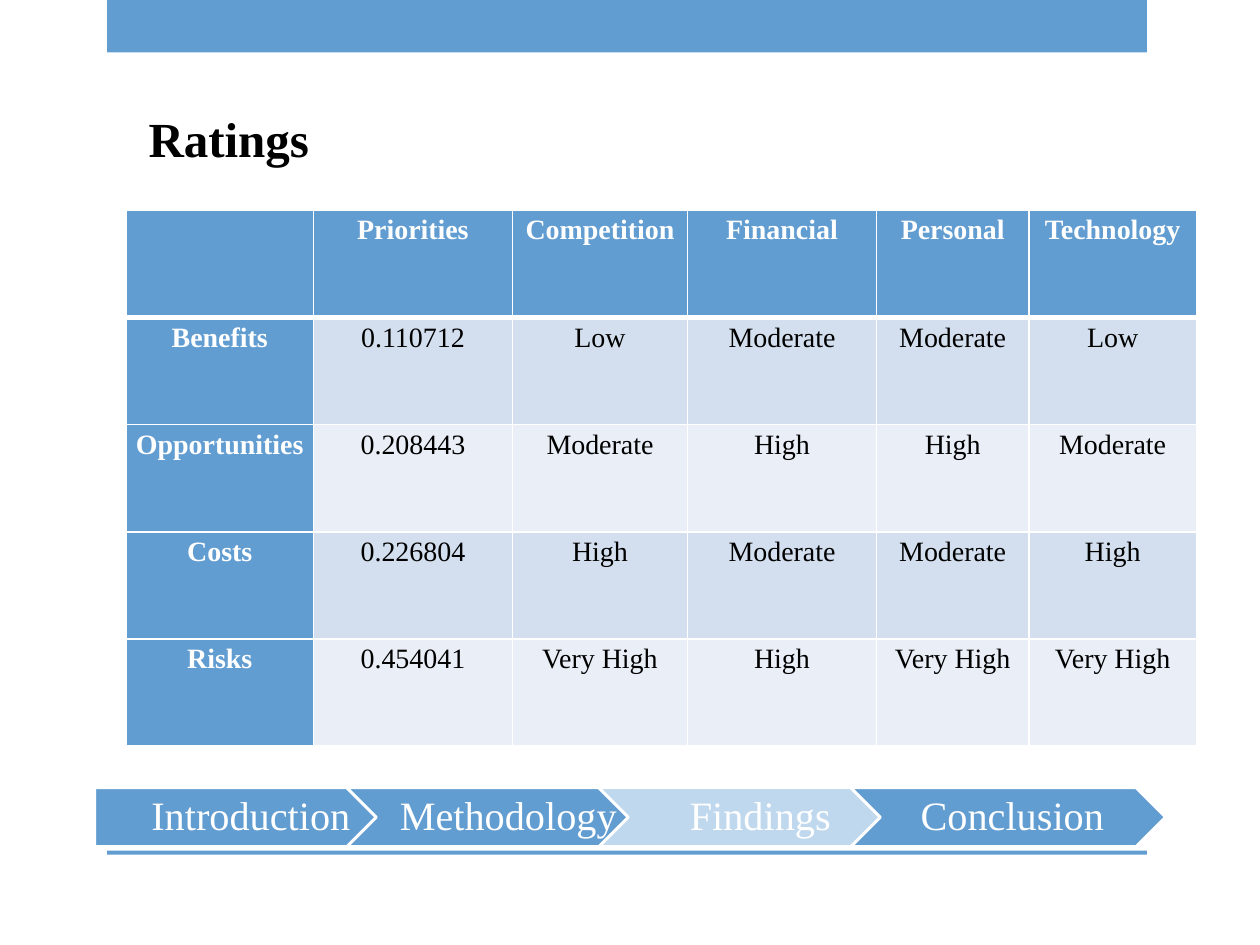
from typing import NamedTuple

from lxml import etree
from pptx import Presentation
from pptx.dml.color import RGBColor
from pptx.enum import shapes, text
from pptx.oxml import ns
from pptx.util import Cm, Pt

FONT = "Times New Roman"
COLORS = {
    "blue": "629DD1",
    "pale_blue": "C0D8ED",
    "dark_band": "D3DFEE",
    "light_band": "EAEFF7",
    "white": "FFFFFF",
    "black": "000000",
}


class Box(NamedTuple):
    left: float
    top: float
    width: float
    height: float

    def lengths(self) -> list:
        return [Cm(side) for side in self]


class Step(NamedTuple):
    label: str
    outline: shapes.MSO_SHAPE = shapes.MSO_SHAPE.CHEVRON
    color: str = "blue"
    left_margin: float = 0.25


BARS = [Box(2.16, 0, 20.96, 1.06), Box(2.16, 17.15, 20.96, 0.08)]
TITLE_BOX = Box(2.74, 2.06, 19.25, 1.45)

COLUMN_WIDTHS = [3.78, 4.01, 3.53, 3.81, 3.07, 3.38]
ROW_HEIGHT = 2.16
RATINGS = [
    ["", "Priorities", "Competition", "Financial", "Personal", "Technology"],
    ["Benefits", "0.110712", "Low", "Moderate", "Moderate", "Low"],
    ["Opportunities", "0.208443", "Moderate", "High", "High", "Moderate"],
    ["Costs", "0.226804", "High", "Moderate", "Moderate", "High"],
    ["Risks", "0.454041", "Very High", "High", "Very High", "Very High"],
]

FIRST_STEP = Box(1.91, 15.88, 6.35, 1.19)
STEP_PITCH = 5.08
STEPS = [
    Step("Introduction", shapes.MSO_SHAPE.PENTAGON, left_margin=0.33),
    Step("Methodology"),
    Step("Findings", color="pale_blue"),
    Step("Conclusion"),
]


def rgb(color: str) -> RGBColor:
    return RGBColor.from_string(COLORS[color])


def add_run(paragraph, words: str, size: float, color: str, bold: bool = False) -> None:
    run = paragraph.add_run()
    run.text = words
    run.font.name = FONT
    run.font.size = Pt(size)
    run.font.bold = bold
    run.font.color.rgb = rgb(color)


def add_filled_shape(slide, outline: shapes.MSO_SHAPE, box: Box, color: str):
    shape = slide.shapes.add_shape(outline, *box.lengths())
    shape.shadow.inherit = False
    shape.fill.solid()
    shape.fill.fore_color.rgb = rgb(color)
    shape.line.fill.background()
    return shape


def add_title(slide) -> None:
    title = slide.shapes.title
    title.left, title.top, title.width, title.height = TITLE_BOX.lengths()
    frame = title.text_frame
    frame.auto_size = text.MSO_AUTO_SIZE.SHAPE_TO_FIT_TEXT
    frame.vertical_anchor = text.MSO_ANCHOR.TOP
    frame.paragraphs[0].alignment = text.PP_ALIGN.LEFT
    add_run(frame.paragraphs[0], "Ratings", 28, "black", bold=True)


def set_borders(cell, **widths: float) -> None:
    """Draw white borders; the keys are the sides L, R, T and B, in that order."""
    properties = cell._tc.get_or_add_tcPr()
    for side, width in widths.items():
        border = etree.SubElement(properties, ns.qn(f"a:ln{side}"), w=str(Pt(width)))
        fill = etree.SubElement(border, ns.qn("a:solidFill"))
        etree.SubElement(fill, ns.qn("a:srgbClr"), val=COLORS["white"])


def format_cell(cell, words: str, row: int, column: int) -> None:
    is_heading = row == 0 or column == 0
    band = "dark_band" if row % 2 else "light_band"
    set_borders(cell, L=1, R=1, T=3 if row == 1 else 1, B=3 if row == 0 else 1)
    cell.fill.solid()
    cell.fill.fore_color.rgb = rgb("blue" if is_heading else band)
    cell.margin_left = cell.margin_right = Cm(0.18)
    cell.margin_top = cell.margin_bottom = 0
    paragraph = cell.text_frame.paragraphs[0]
    paragraph.alignment = text.PP_ALIGN.CENTER
    paragraph.line_spacing = 1.15
    paragraph.space_after = Pt(6)
    if words:
        add_run(paragraph, words, 16, "white" if is_heading else "black", is_heading)


def add_ratings(slide) -> None:
    box = Box(2.54, 4.24, sum(COLUMN_WIDTHS), ROW_HEIGHT * len(RATINGS))
    table = slide.shapes.add_table(
        len(RATINGS), len(COLUMN_WIDTHS), *box.lengths()
    ).table
    for column, width in zip(table.columns, COLUMN_WIDTHS):
        column.width = Cm(width)
    for row, ratings in enumerate(RATINGS):
        table.rows[row].height = Cm(ROW_HEIGHT)
        for column, words in enumerate(ratings):
            format_cell(table.cell(row, column), words, row, column)


def add_step(slide, step: Step, position: int) -> None:
    box = FIRST_STEP._replace(left=FIRST_STEP.left + position * STEP_PITCH)
    arrow = add_filled_shape(slide, step.outline, box, step.color)
    arrow.line.color.rgb = rgb("white")
    arrow.line.width = Pt(1.75)
    frame = arrow.text_frame
    frame.word_wrap = True
    frame.vertical_anchor = text.MSO_ANCHOR.MIDDLE
    frame.margin_left, frame.margin_right = Cm(step.left_margin), Cm(0.08)
    frame.margin_top = frame.margin_bottom = Cm(0.18)
    paragraph = frame.paragraphs[0]
    paragraph.alignment = text.PP_ALIGN.CENTER
    paragraph.line_spacing = 0.9
    add_run(paragraph, step.label, 23, "white")


def main() -> None:
    deck = Presentation()
    deck.slide_width, deck.slide_height = Cm(25.4), Cm(19.05)
    slide = deck.slides.add_slide(deck.slide_layouts.get_by_name("Title Only"))
    for bar in BARS:
        add_filled_shape(slide, shapes.MSO_SHAPE.RECTANGLE, bar, "blue")
    add_ratings(slide)
    add_title(slide)
    for position, step in enumerate(STEPS):
        add_step(slide, step, position)
    deck.save("out.pptx")


if __name__ == "__main__":
    main()
